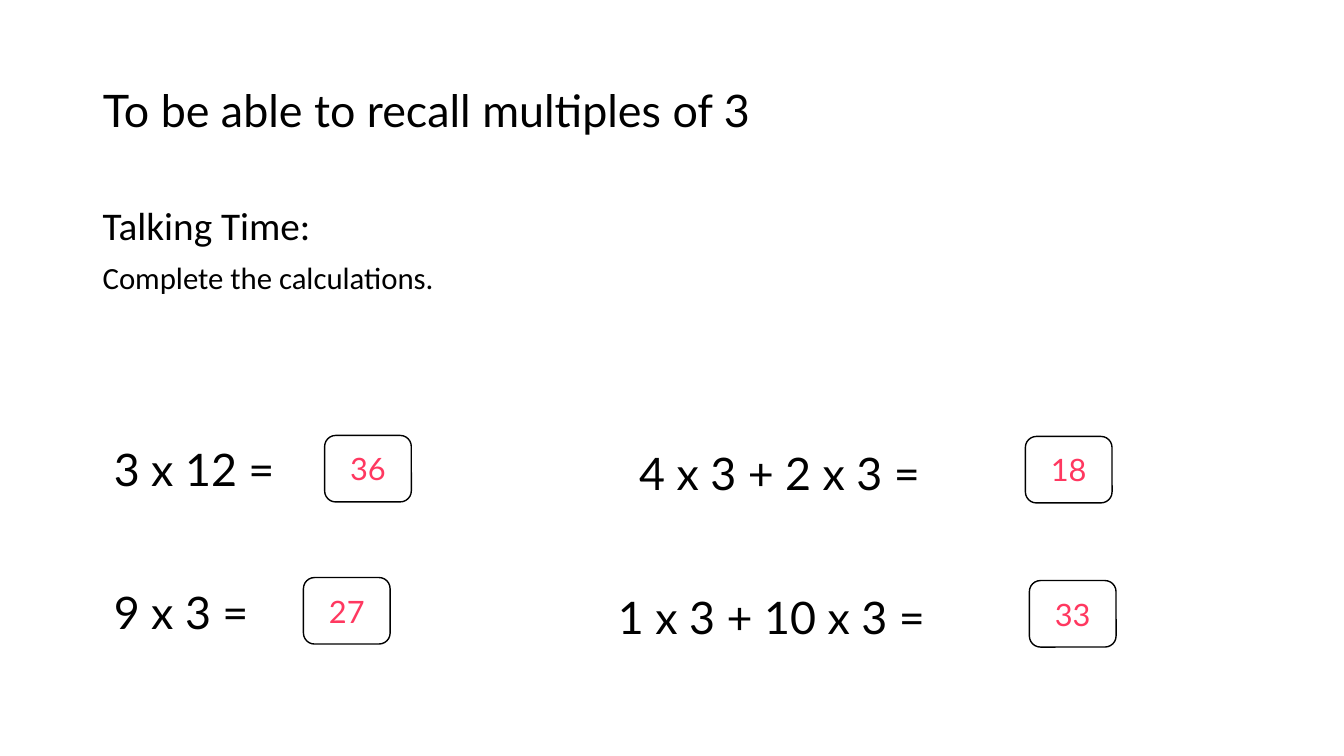
from pptx import Presentation
from pptx.dml.color import RGBColor
from pptx.enum.shapes import MSO_SHAPE as Shape
from pptx.enum.text import MSO_ANCHOR as Anchor, MSO_AUTO_SIZE as Fit, PP_ALIGN as Align
from pptx.util import Inches, Pt

BLACK = RGBColor(0x00, 0x00, 0x00)
WHITE = RGBColor(0xFF, 0xFF, 0xFF)
PINK = RGBColor(0xFF, 0x38, 0x60)

# sum, its left, top and width, answer, left and top of the answer box
SUMS = [
    ("3 x 12 =", 1.03, 4.33, 2.41, "36", 3.22, 4.32),
    ("9 x 3 =", 1.03, 5.75, 2.41, "27", 3.01, 5.73),
    ("4 x 3 + 2 x 3 =", 6.24, 4.37, 4.24, "18", 10.17, 4.33),
    ("1 x 3 + 10 x 3 =", 6.03, 5.8, 4.24, "33", 10.21, 5.76),
]


def write(para, text, size, font="Lato", color=BLACK, align=Align.LEFT,
          line=1.0, before=0):
    para.text = text
    para.alignment = align
    para.line_spacing = line
    para.space_before = Pt(before)
    para.font.size = Pt(size)
    para.font.name = font
    para.font.color.rgb = color


def add_title(slide, text):
    title = slide.shapes.title
    title.left, title.top = Inches(0.92), Inches(0.4)
    title.width, title.height = Inches(9.6), Inches(1.45)
    frame = title.text_frame
    frame.auto_size = Fit.NONE
    frame.vertical_anchor = Anchor.MIDDLE
    write(frame.paragraphs[0], text, 32, line=0.9)


def add_text(slide, left, top, width, height):
    box = slide.shapes.add_textbox(Inches(left), Inches(top),
                                   Inches(width), Inches(height))
    box.text_frame.word_wrap = True
    return box.text_frame


def add_task(slide, head, task):
    frame = add_text(slide, 0.92, 2, 11.5, 4.76)
    write(frame.paragraphs[0], head, 28, font="Calibri", line=0.9)
    write(frame.add_paragraph(), task, 22, font="Calibri", line=0.9, before=10)


def add_sum(slide, text, left, top, width):
    frame = add_text(slide, left, top, width, 0.64)
    frame.auto_size = Fit.SHAPE_TO_FIT_TEXT
    write(frame.paragraphs[0], text, 32)


def add_answer(slide, text, left, top):
    box = slide.shapes.add_shape(Shape.ROUNDED_RECTANGLE, Inches(left),
                                 Inches(top), Inches(0.86), Inches(0.66))
    box.shadow.inherit = False
    box.fill.solid()
    box.fill.fore_color.rgb = WHITE
    box.line.color.rgb = BLACK
    box.line.width = Pt(1)
    frame = box.text_frame
    frame.vertical_anchor = Anchor.MIDDLE
    write(frame.paragraphs[0], text, 22, color=PINK, align=Align.CENTER)


def main():
    deck = Presentation()
    deck.slide_width, deck.slide_height = Inches(13.33), Inches(7.5)
    slide = deck.slides.add_slide(deck.slide_layouts[5])

    # Heading and task
    add_title(slide, "To be able to recall multiples of 3")
    add_task(slide, "Talking Time:", "Complete the calculations.")

    # Sums with their answers
    for text, left, top, width, answer, box_left, box_top in SUMS:
        add_sum(slide, text, left, top, width)
        add_answer(slide, answer, box_left, box_top)

    deck.save("out.pptx")


if __name__ == "__main__":
    main()
